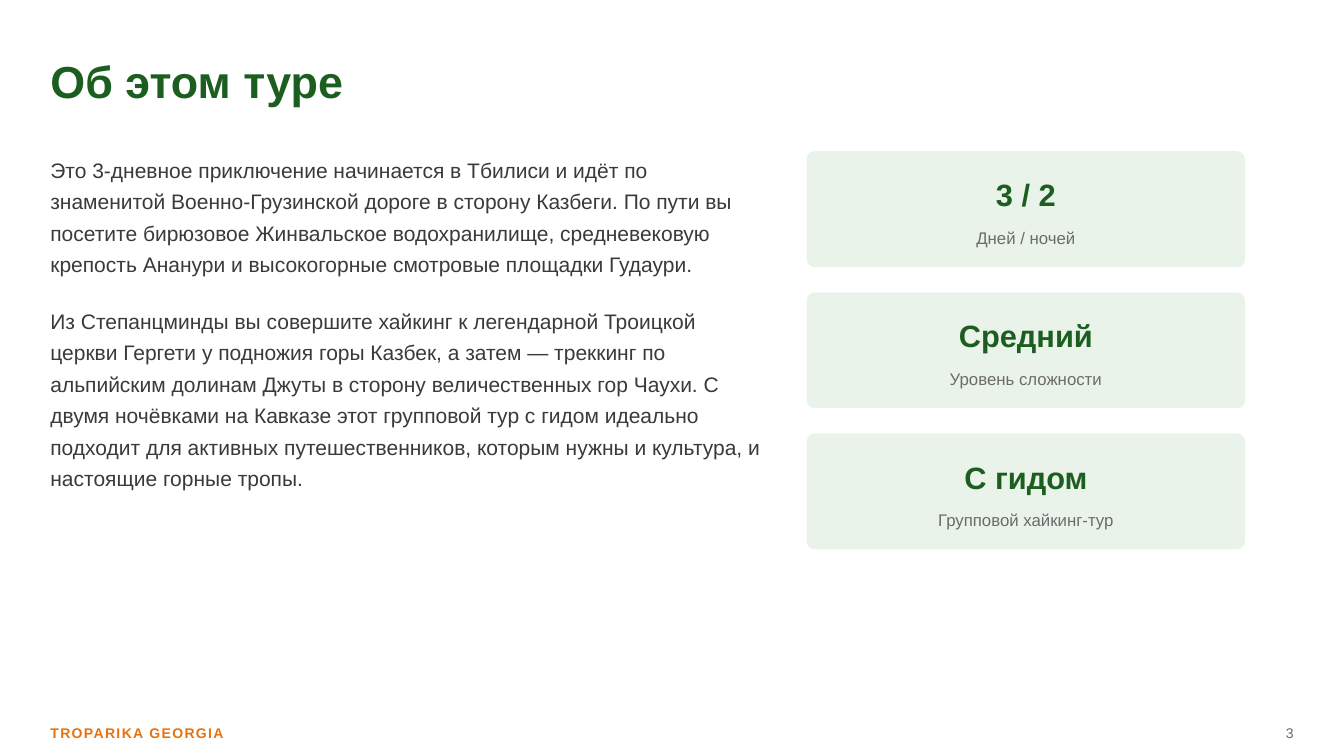
import pptx
import pptx.dml.color
import pptx.enum.shapes
import pptx.enum.text
import pptx.util

Inches = pptx.util.Inches
Pt = pptx.util.Pt
ALIGN = pptx.enum.text.PP_ALIGN
ANCHOR = pptx.enum.text.MSO_ANCHOR

GREEN = "1B5E20"
PALE_GREEN = "EAF3EA"
DARK_GRAY = "3A3A3A"
GRAY = "6B6B6B"
ORANGE = "E8720C"


def color(hex_value):
    return pptx.dml.color.RGBColor.from_string(hex_value)


def write_text(shape, text, size, hex_value, bold=False, align=ALIGN.LEFT, anchor=ANCHOR.MIDDLE):
    """Fill a shape with uniformly styled text without inner margins."""
    frame = shape.text_frame
    frame.text = text
    frame.word_wrap = True
    frame.auto_size = pptx.enum.text.MSO_AUTO_SIZE.NONE
    frame.vertical_anchor = anchor
    frame.margin_left = frame.margin_right = frame.margin_top = frame.margin_bottom = 0
    for paragraph in frame.paragraphs:
        paragraph.alignment = align
        for run in paragraph.runs:
            run.font.name = "Arial"
            run.font.size = Pt(size)
            run.font.bold = bold
            run.font.color.rgb = color(hex_value)
    return frame


presentation = pptx.Presentation()
presentation.slide_width = Inches(13.33)
presentation.slide_height = Inches(7.5)
slide = presentation.slides.add_slide(presentation.slide_layouts[5])
slide.background.fill.solid()
slide.background.fill.fore_color.rgb = color("FFFFFF")

title = slide.shapes.title
title.left, title.top = Inches(0.5), Inches(0.45)
title.width, title.height = Inches(8), Inches(0.7)
write_text(title, "Об этом туре", 32, GREEN, bold=True)

description = [
    "Это 3-дневное приключение начинается в Тбилиси и идёт по знаменитой "
    "Военно-Грузинской дороге в сторону Казбеги. По пути вы посетите бирюзовое "
    "Жинвальское водохранилище, средневековую крепость Ананури и высокогорные "
    "смотровые площадки Гудаури.",
    "Из Степанцминды вы совершите хайкинг к легендарной Троицкой церкви Гергети "
    "у подножия горы Казбек, а затем — треккинг по альпийским долинам Джуты в "
    "сторону величественных гор Чаухи. С двумя ночёвками на Кавказе этот групповой "
    "тур с гидом идеально подходит для активных путешественников, которым нужны и "
    "культура, и настоящие горные тропы.",
]
body = slide.shapes.add_textbox(Inches(0.5), Inches(1.5), Inches(7.1), Inches(4.5))
body_frame = write_text(body, "\n".join(description), 15, DARK_GRAY, anchor=ANCHOR.TOP)
for paragraph in body_frame.paragraphs:
    paragraph.line_spacing = 1.25
body_frame.paragraphs[0].space_after = Pt(18)

facts = [
    ("3 / 2", "Дней / ночей"),
    ("Средний", "Уровень сложности"),
    ("С гидом", "Групповой хайкинг-тур"),
]
card_left, card_width = Inches(8), Inches(4.35)
for index, (value, label) in enumerate(facts):
    card_top = Inches(1.5 + 1.4 * index)
    card = slide.shapes.add_shape(
        pptx.enum.shapes.MSO_SHAPE.ROUNDED_RECTANGLE, card_left, card_top, card_width, Inches(1.15)
    )
    card.adjustments[0] = 0.07
    card.shadow.inherit = False
    card.fill.solid()
    card.fill.fore_color.rgb = color(PALE_GREEN)
    card.line.fill.background()

    value_box = slide.shapes.add_textbox(card_left, card_top + Inches(0.18), card_width, Inches(0.5))
    write_text(value_box, value, 22, GREEN, bold=True, align=ALIGN.CENTER)
    label_box = slide.shapes.add_textbox(card_left, card_top + Inches(0.68), card_width, Inches(0.35))
    write_text(label_box, label, 12, GRAY, align=ALIGN.CENTER)

footer = slide.shapes.add_textbox(Inches(0.5), Inches(7.12), Inches(4), Inches(0.3))
footer_frame = write_text(footer, "TROPARIKA GEORGIA", 10, ORANGE, bold=True)
footer_frame.paragraphs[0].runs[0].font._element.set("spc", "100")

page_number = slide.shapes.add_textbox(Inches(12.33), Inches(7.12), Inches(0.5), Inches(0.3))
write_text(page_number, "3", 10, GRAY, align=ALIGN.RIGHT)

presentation.save("out.pptx")
